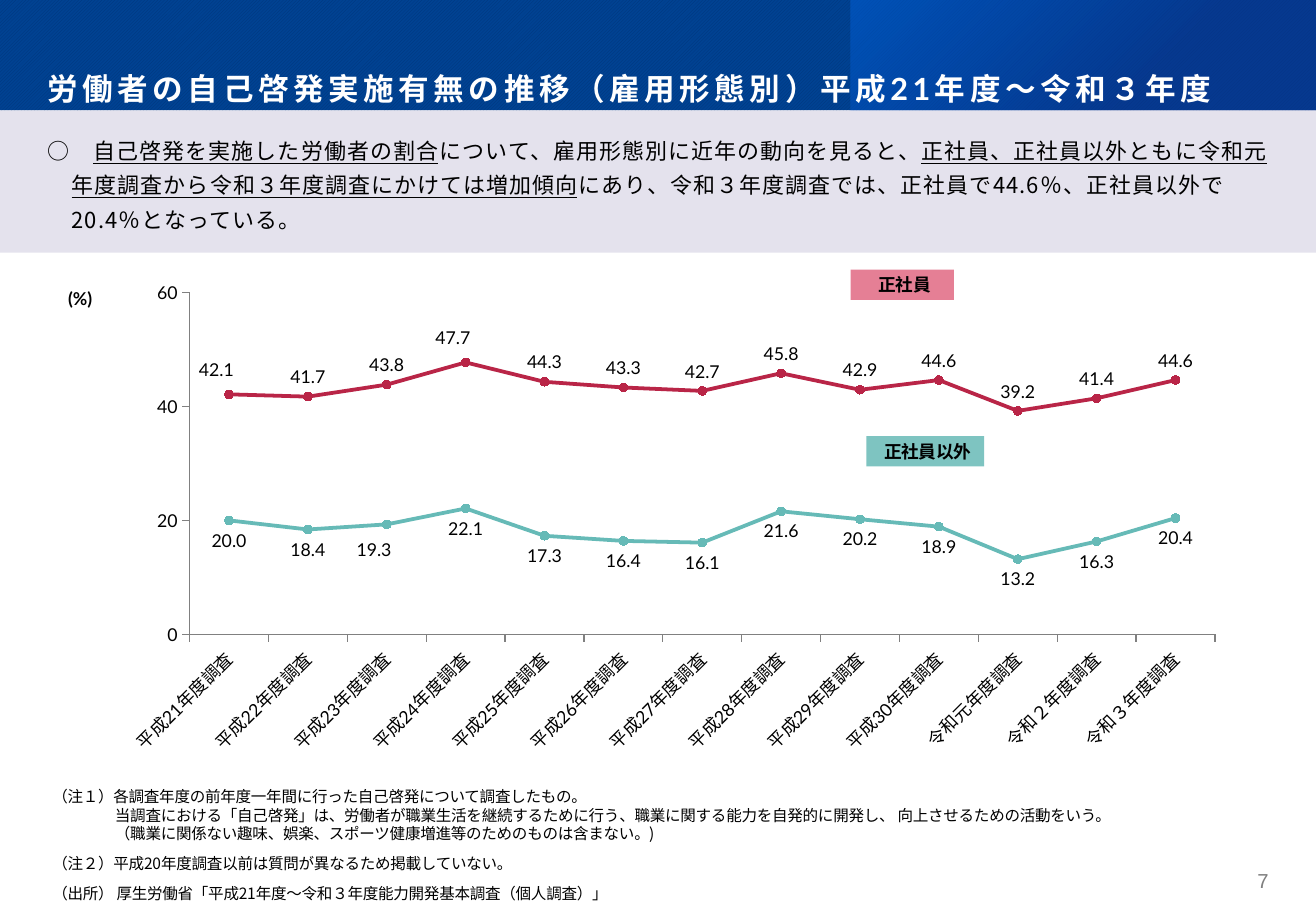
from lxml.etree import SubElement
from pptx import Presentation
from pptx.chart.data import CategoryChartData
from pptx.dml.color import RGBColor
from pptx.enum.chart import XL_CHART_TYPE as ChartType, XL_LABEL_POSITION as LabelPos
from pptx.enum.chart import XL_MARKER_STYLE as Marker, XL_TICK_MARK as Tick
from pptx.enum.dml import MSO_PATTERN as Pattern
from pptx.enum.shapes import MSO_SHAPE as Shape
from pptx.enum.text import MSO_ANCHOR as Anchor, PP_ALIGN as Align
from pptx.oxml import parse_xml
from pptx.oxml.ns import nsdecls, qn
from pptx.util import Inches, Pt

BLACK = RGBColor(0x00, 0x00, 0x00)
WHITE = RGBColor(0xFF, 0xFF, 0xFF)
GREY = RGBColor(0x80, 0x80, 0x80)
NAVY = RGBColor(0x00, 0x35, 0x79)
BLUE = RGBColor(0x00, 0x42, 0x92)
LAVENDER = RGBColor(0xE4, 0xE2, 0xED)
RED = RGBColor(0xB9, 0x25, 0x47)
TEAL = RGBColor(0x66, 0xBA, 0xB7)
PINK = RGBColor(0xE5, 0x7F, 0x95)
PALE_TEAL = RGBColor(0x7E, 0xC4, 0xC1)

GOTHIC = "Noto Sans CJK JP"
WIDTH, HEADER = 10.83, 0.91
YEARS = [f"平成{year}年度調査" for year in range(21, 31)]
YEARS += [f"令和{year}年度調査" for year in "元２３"]
REGULAR = [42.1, 41.7, 43.8, 47.7, 44.3, 43.3, 42.7, 45.8, 42.9, 44.6, 39.2, 41.4, 44.6]
OTHER = [20.0, 18.4, 19.3, 22.1, 17.3, 16.4, 16.1, 21.6, 20.2, 18.9, 13.2, 16.3, 20.4]
SERIES = [
    ("正社員", REGULAR, RED, LabelPos.ABOVE, {0: (-0.01, -0.01), 3: (-0.01, -0.01)}),
    ("正社員以外", OTHER, TEAL, LabelPos.BELOW, {2: (-0.01, 0.01)}),
]
SUMMARY = [
    ("○　", False),
    ("自己啓発を実施した労働者の割合", True),
    ("について、雇用形態別に近年の動向を見ると、", False),
    ("正社員、正社員以外ともに令和元年度調査から令和３年度調査にかけては増加傾向", True),
    ("にあり、令和３年度調査では、正社員で44.6％、正社員以外で20.4％となっている。", False),
]
NOTES = [
    "（注１）各調査年度の前年度一年間に行った自己啓発について調査したもの。\v"
    "　当調査における「自己啓発」は、労働者が職業生活を継続するために行う、"
    "職業に関する能力を自発的に開発し、 向上させるための活動をいう。\v"
    "　（職業に関係ない趣味、娯楽、スポーツ健康増進等のためのものは含まない。)",
    "（注２）平成20年度調査以前は質問が異なるため掲載していない。",
    "（出所） 厚生労働省「平成21年度～令和３年度能力開発基本調査（個人調査）」",
]


def apply(target, values):
    """Set each named attribute of the target."""
    for name, value in values.items():
        setattr(target, name, value)


def style_span(span, size, name=GOTHIC, color=BLACK, spacing=0.0, **values):
    """Format one run, including its East Asian font and letter spacing."""
    apply(span.font, {"size": Pt(size), "name": name, **values})
    span.font.color.rgb = color
    props = span.font._element
    props.set("spc", str(round(spacing * 100)))
    SubElement(props, qn("a:ea")).set("typeface", GOTHIC)


def style_para(para, indent=0.0, **values):
    """Format one paragraph with an optional hanging indent."""
    apply(para, values)
    props = para._p.get_or_add_pPr()
    props.set("marL", str(Inches(indent)))
    props.set("indent", str(Inches(-indent)))


def set_frame(frame, insets=(0, 0, 0, 0), anchor=Anchor.TOP):
    """Set wrapping, insets and anchor of a text frame."""
    sides = ("margin_left", "margin_top", "margin_right", "margin_bottom")
    apply(frame, {"word_wrap": True, "vertical_anchor": anchor})
    apply(frame, {side: Inches(inset) for side, inset in zip(sides, insets)})


def add_box(page, place):
    """Add a rectangle without line or shadow."""
    box = page.shapes.add_shape(Shape.RECTANGLE, *map(Inches, place))
    box.shadow.inherit = False
    box.line.fill.background()
    return box


def add_solid_box(page, place, color):
    """Add a rectangle of one colour."""
    box = add_box(page, place)
    box.fill.solid()
    box.fill.fore_color.rgb = color
    return box


def add_text(page, place, text, para_values, span_values, **frame_values):
    """Add a text box holding one paragraph."""
    box = page.shapes.add_textbox(*map(Inches, place))
    set_frame(box.text_frame, **frame_values)
    para = box.text_frame.paragraphs[0]
    para.text = text
    style_para(para, **para_values)
    style_span(para.runs[0], **span_values)


def add_header(page):
    """Add the patterned header, its gradient wedge and the title."""
    place = (0, 0, WIDTH, HEADER)
    fill = add_box(page, place).fill
    fill.patterned()
    fill.pattern = Pattern.DARK_UPWARD_DIAGONAL
    fill.fore_color.rgb, fill.back_color.rgb = NAVY, BLUE
    builder = page.shapes.build_freeform(7.49, 0, scale=Inches(1))
    builder.add_line_segments([(WIDTH, 0), (WIDTH, HEADER), (6.58, HEADER)])
    wedge = builder.convert_to_shape()
    wedge.shadow.inherit = False
    wedge.line.fill.background()
    stops = "".join(
        f'<a:gs pos="{pos}000"><a:srgbClr val="{color}"><a:alpha val="{alpha}000"/></a:srgbClr></a:gs>'
        for pos, color, alpha in [(0, "0064DF", 50), (62, "0C338E", 55)])
    wedge._element.spPr.find(qn("a:custGeom")).addnext(parse_xml(
        f'<a:gradFill {nsdecls("a")} rotWithShape="1"><a:gsLst>{stops}</a:gsLst><a:path path="circle">'
        '<a:fillToRect r="100000" b="100000"/></a:path></a:gradFill>'))
    add_text(page, place, "労働者の自己啓発実施有無の推移（雇用形態別）平成21年度～令和３年度",
             {"line_spacing": 0.9},
             {"size": 18.1, "name": "Lato", "color": WHITE, "spacing": 2.7, "bold": True},
             insets=(0.39, 0.36, 0.36, 0.14), anchor=Anchor.BOTTOM)


def add_summary(page):
    """Add the lavender band with the partly underlined summary."""
    box = add_solid_box(page, (0, HEADER, WIDTH, 1.17), LAVENDER)
    set_frame(box.text_frame, (0.39, 0.16, 0.39, 0.16))
    para = box.text_frame.paragraphs[0]
    style_para(para, 0.2, alignment=Align.LEFT, line_spacing=1.3,
               space_before=Pt(10), space_after=Pt(8))
    for text, underline in SUMMARY:
        span = para.add_run()
        span.text = text
        style_span(span, 13, spacing=0.7, underline=underline)


def set_layout(parent, index, target="", **values):
    """Give a chart part a manual layout."""
    for old in parent.findall(qn("c:layout")):
        parent.remove(old)
    entries = {"layoutTarget": target} if target else {}
    entries.update({f"{name}Mode": "edge" for name in "xy" if target or "edge" in values})
    values.pop("edge", None)
    entries.update(values)
    body = "".join(f'<c:{name} val="{value}"/>' for name, value in entries.items())
    parent.insert(index, parse_xml(
        f'<c:layout {nsdecls("c")}><c:manualLayout>{body}</c:manualLayout></c:layout>'))


def style_axes(chart):
    """Format both axes and the unit title."""
    category, value = chart.category_axis, chart.value_axis
    for axis in (category, value):
        apply(axis, {"has_major_gridlines": False, "major_tick_mark": Tick.OUTSIDE,
                     "minor_tick_mark": Tick.NONE})
        axis.format.line.color.rgb = GREY
        axis.format.line.width = Pt(0.75)
        apply(axis.tick_labels.font, {"size": Pt(10.5), "name": "Lato"})
    category._element.find(qn("c:txPr")).find(qn("a:bodyPr")).set("rot", "-2700000")
    apply(value, {"minimum_scale": 0, "maximum_scale": 60, "major_unit": 20})
    apply(value.tick_labels, {"number_format": "0", "number_format_is_linked": False})
    frame = value.axis_title.text_frame
    frame.text = "(%)"
    style_span(frame.paragraphs[0].runs[0], 10.5, "Lato", bold=True)
    frame._txBody.find(qn("a:bodyPr")).set("rot", "0")
    set_layout(value.axis_title._element, 1, edge=True, x=0.03, y=0.07)


def add_trend_chart(page):
    """Add the line chart of both employment types."""
    data = CategoryChartData(number_format="0.0")
    data.categories = YEARS
    for name, values, *_ in SERIES:
        data.add_series(name, values)
    place = map(Inches, (0.22, 2.02, 10.47, 4.39))
    chart = page.shapes.add_chart(ChartType.LINE_MARKERS, *place, data).chart
    apply(chart, {"has_legend": False, "has_title": False})
    apply(chart.font, {"size": Pt(10.5), "name": "Lato"})
    chart.font.color.rgb = BLACK
    chart.plots[0].vary_by_categories = False
    set_layout(chart._chartSpace.chart.plotArea, 0, "inner", x=0.128, y=0.088, w=0.806, h=0.642)
    style_axes(chart)
    for series, (_, _, color, position, shifts) in zip(chart.plots[0].series, SERIES):
        series.smooth = False
        series.format.line.color.rgb = color
        series.format.line.width = Pt(2.25)
        apply(series.marker, {"style": Marker.CIRCLE, "size": 5})
        series.marker.format.fill.solid()
        series.marker.format.fill.fore_color.rgb = color
        series.marker.format.line.color.rgb = color
        apply(series.data_labels, {"show_value": True, "position": position,
                                   "number_format": "0.0", "number_format_is_linked": False})
        for index, (x, y) in shifts.items():
            label = series.points[index].data_label
            label.position = position
            set_layout(label._get_or_add_dLbl(), 1, x=x, y=y)


def add_series_tag(page, place, text, color):
    """Add a coloured tag that names a line."""
    box = add_solid_box(page, place, color)
    set_frame(box.text_frame, (0.04, 0, 0, 0), Anchor.MIDDLE)
    para = box.text_frame.paragraphs[0]
    para.text = text
    style_para(para, 0.39, alignment=Align.CENTER, space_before=Pt(5.5), space_after=Pt(5.5))
    style_span(para.runs[0], 10.5, spacing=-0.2, bold=True)


def add_notes(page):
    """Add the notes and the source under the chart."""
    frame = page.shapes.add_textbox(*map(Inches, (0.39, 6.48, 9.35, 0.97))).text_frame
    set_frame(frame, (0.04, 0, 0, 0))
    for index, text in enumerate(NOTES):
        para = frame.add_paragraph() if index else frame.paragraphs[0]
        para.text = text
        style_para(para, 0.39, space_before=Pt(1), space_after=Pt(5.5))
        for span in para.runs:
            style_span(span, 9.2, spacing=-0.2)
        for line_break in para._p.findall(qn("a:br")):
            SubElement(line_break, qn("a:rPr")).set("sz", "920")


def main():
    """Build the slide and save it."""
    deck = Presentation()
    apply(deck, {"slide_width": Inches(WIDTH), "slide_height": Inches(7.5)})
    page = deck.slides.add_slide(deck.slide_layouts[6])
    add_header(page)
    add_text(page, (9.75, 7.15, 0.69, 0.3), "7", {"alignment": Align.RIGHT},
             {"size": 12, "name": "Arial", "color": GREY})
    add_summary(page)
    add_trend_chart(page)
    add_series_tag(page, (7, 2.22, 0.85, 0.25), "正社員", PINK)
    add_series_tag(page, (7.13, 3.59, 0.97, 0.25), "正社員以外", PALE_TEAL)
    add_notes(page)
    deck.save("out.pptx")


if __name__ == "__main__":
    main()
